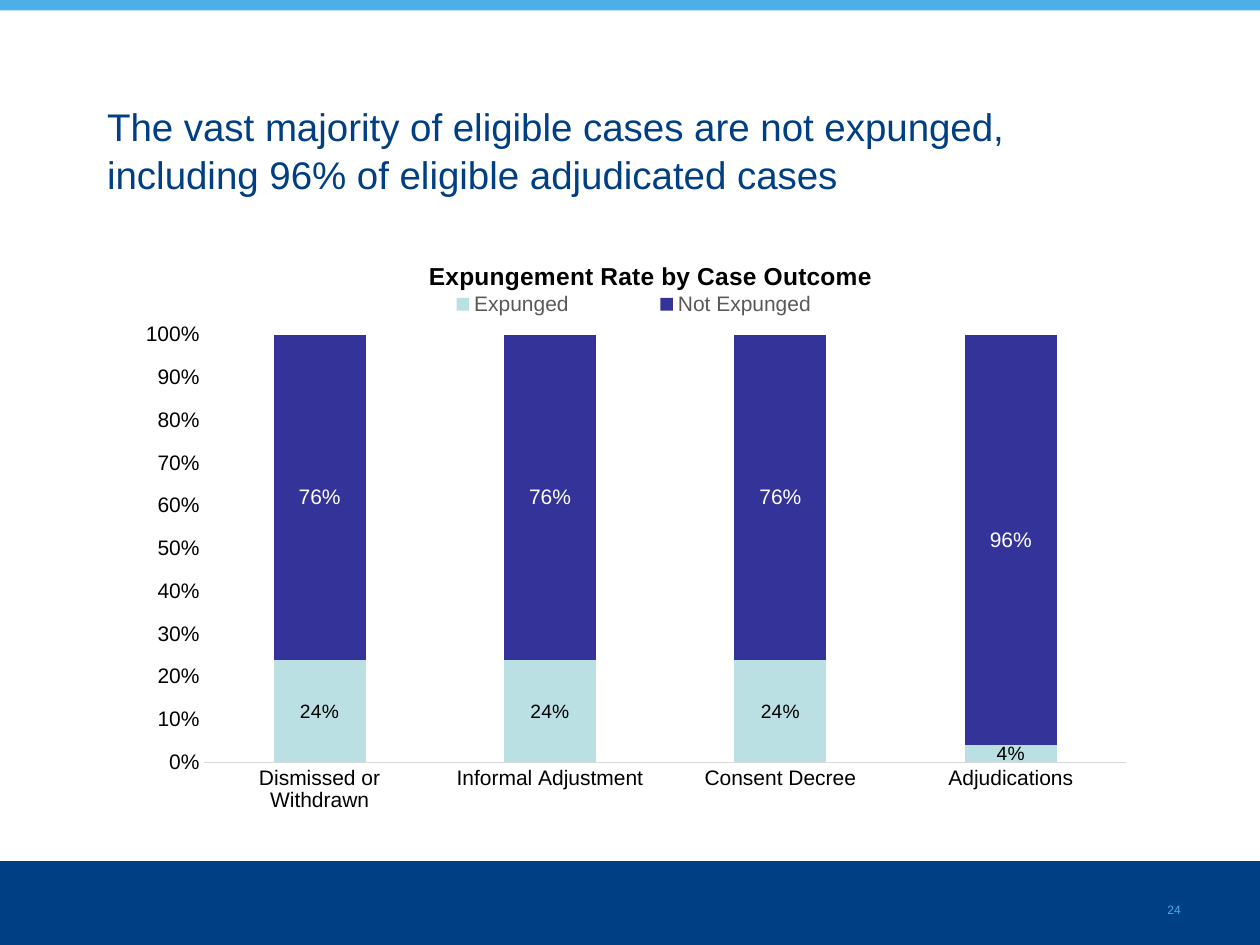
from lxml import etree
from pptx import Presentation
from pptx.chart.data import CategoryChartData
from pptx.dml.color import RGBColor
from pptx.enum.chart import XL_CHART_TYPE, XL_LABEL_POSITION, XL_LEGEND_POSITION, XL_TICK_MARK
from pptx.enum.shapes import MSO_SHAPE
from pptx.enum.text import MSO_ANCHOR, PP_ALIGN
from pptx.oxml.ns import qn
from pptx.util import Pt

# Content
FONT = "Arial"
NAVY, SKY = "003F83", "4CAFE6"
TITLE = ("The vast majority of eligible cases are not expunged, "
         "including 96% of eligible adjudicated cases")
PAGE_NUMBER = "24"
BANDS = [(492, 48, NAVY), (0, 6, SKY)]  # top, height, colour
CHART_TITLE = "Expungement Rate by Case Outcome"
CATEGORIES = ["Dismissed or Withdrawn", "Informal Adjustment",
              "Consent Decree", "Adjudications"]
# name, values, fill, label colour, label size
SERIES = [
    ("Expunged", [0.24, 0.24, 0.24, 0.04], "BBE0E3", "000000", 11),
    ("Not Expunged", [0.76, 0.76, 0.76, 0.96], "333399", "FFFFFF", 12),
]


def color(value):
    return RGBColor.from_string(value)


def set_font(font, size, value, bold=False):
    font.name, font.size, font.bold = FONT, Pt(size), bold
    font.color.rgb = color(value)


def set_layout(parent, index, **fractions):
    """Place a chart part at fractions of the chart area."""
    for old in parent.findall(qn("c:layout")):
        parent.remove(old)
    layout = etree.Element(qn("c:layout"))
    manual = etree.SubElement(layout, qn("c:manualLayout"))
    modes = {"xMode": "edge", "yMode": "edge"}
    for tag, value in {**modes, **fractions}.items():
        etree.SubElement(manual, qn(f"c:{tag}")).set("val", str(value))
    parent.insert(index, layout)


presentation = Presentation()
presentation.slide_width, presentation.slide_height = Pt(720), Pt(540)
slide = presentation.slides.add_slide(presentation.slide_layouts[5])
shapes = slide.shapes

# Bands
for top, height, fill in BANDS:
    band = shapes.add_shape(MSO_SHAPE.RECTANGLE, 0, Pt(top), Pt(720), Pt(height))
    band.shadow.inherit = False
    band.fill.solid()
    band.fill.fore_color.rgb = color(fill)
    band.line.fill.background()

# Title
title = shapes.title
title.left, title.top, title.width, title.height = Pt(54), Pt(54), Pt(612), Pt(42)
frame = title.text_frame
frame.text = TITLE
frame.word_wrap = True
frame.vertical_anchor = MSO_ANCHOR.TOP
paragraph = frame.paragraphs[0]
paragraph.alignment = PP_ALIGN.LEFT
paragraph.line_spacing = 1.04
set_font(paragraph.font, 22, NAVY)

# Page number, set as a subscript
number_box = shapes.add_textbox(Pt(660), Pt(504), Pt(24.5), Pt(16.5))
number_box.text_frame.word_wrap = False
run = number_box.text_frame.paragraphs[0].add_run()
run.text = PAGE_NUMBER
set_font(run.font, 12, "46B0E7")
run._r.get_or_add_rPr().set("baseline", "-25000")

# Chart
data = CategoryChartData(number_format="0%")
data.categories = CATEGORIES
for name, values, *_ in SERIES:
    data.add_series(name, values)
chart = shapes.add_chart(XL_CHART_TYPE.COLUMN_STACKED, Pt(57), Pt(135.5),
                         Pt(598.5), Pt(349), data).chart
set_font(chart.font, 10, "000000")

chart.has_title = True
chart.chart_title.include_in_layout = False
chart.chart_title.text_frame.text = CHART_TITLE
set_font(chart.chart_title.text_frame.paragraphs[0].font, 14, "000000", bold=True)

chart.has_legend = True
chart.legend.position = XL_LEGEND_POSITION.BOTTOM
chart.legend.include_in_layout = False
set_font(chart.legend.font, 12, "595959")

# Series and labels
plot = chart.plots[0]
plot.gap_width, plot.overlap = 150, 100
plot.vary_by_categories = False
for series, (_, _, fill, label_color, size) in zip(plot.series, SERIES):
    series.format.fill.solid()
    series.format.fill.fore_color.rgb = color(fill)
    labels = series.data_labels
    labels.show_value = True
    labels.number_format, labels.number_format_is_linked = "0%", False
    labels.position = XL_LABEL_POSITION.CENTER
    set_font(labels.font, size, label_color)

# Axes
category_axis, value_axis = chart.category_axis, chart.value_axis
for axis in (category_axis, value_axis):
    axis.major_tick_mark = axis.minor_tick_mark = XL_TICK_MARK.NONE
    axis.has_major_gridlines = False
    set_font(axis.tick_labels.font, 12, "000000")
category_axis.format.line.color.rgb = color("D9D9D9")
category_axis.format.line.width = Pt(0.75)
value_axis.format.line.fill.background()
value_axis.minimum_scale, value_axis.maximum_scale, value_axis.major_unit = 0, 1, 0.1
value_axis.tick_labels.number_format = "0%"
value_axis.tick_labels.number_format_is_linked = False

# Positions inside the chart
chart_xml = chart._chartSpace.find(qn("c:chart"))
set_layout(chart_xml.find(qn("c:title")), 1, x=0.31, y=0.03)
set_layout(chart_xml.find(qn("c:legend")), 1, x=0.26, y=0.08, w=0.5, h=0.06)
set_layout(chart_xml.find(qn("c:plotArea")), 0, layoutTarget="inner",
           x=0.1, y=0.16, w=0.88, h=0.7)
# The schema wants layoutTarget ahead of the modes
plot_manual = chart_xml.find(qn("c:plotArea")).find(qn("c:layout"))[0]
plot_manual.insert(0, plot_manual.find(qn("c:layoutTarget")))

presentation.save("out.pptx")
